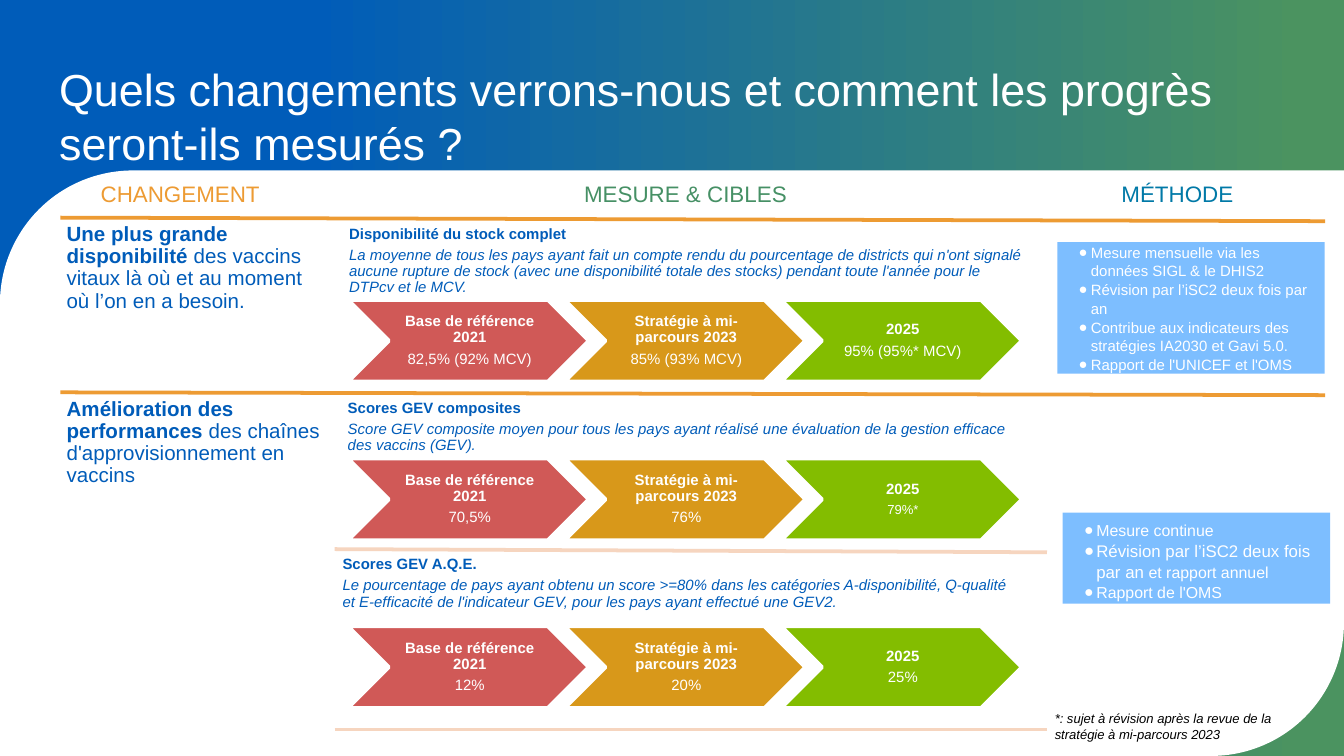
from dataclasses import dataclass
from lxml.etree import SubElement as Sub
from pptx import Presentation
from pptx.dml.color import RGBColor as RGB
from pptx.enum.shapes import MSO_CONNECTOR as Link, MSO_SHAPE as Shape
from pptx.enum.text import MSO_ANCHOR as Anchor, MSO_AUTO_SIZE as Fit, PP_ALIGN as Align
from pptx.oxml.ns import qn
from pptx.util import Pt


@dataclass
class Theme:
    font: str = "Arial"
    blue: str = "005CB9"
    green: str = "4B9360"
    white: str = "FFFFFF"
    black: str = "000000"
    gold: str = "ED9B33"
    peach: str = "F6D5BF"
    leaf: str = "469065"
    teal: str = "0079A7"
    sky: str = "7DBEFF"
    steps: tuple = ("D05957", "D8981A", "83BD00")
    title: float = 24
    head: float = 12
    lead: float = 11
    body: float = 8
    note: float = 7


theme = Theme()


def write(shape, paras, size=theme.body, color=theme.white, pad=(7.2, 7.2, 7.2, 7.2),
          align=Align.LEFT, anchor=Anchor.TOP, line=1, after=0, dots=False):
    frame = shape.text_frame
    frame.word_wrap = True
    frame.auto_size = Fit.NONE
    frame.vertical_anchor = anchor
    (frame.margin_left, frame.margin_top,
     frame.margin_right, frame.margin_bottom) = map(Pt, pad)
    for i, runs in enumerate(paras):
        para = frame.add_paragraph() if i else frame.paragraphs[0]
        if dots:
            props = para._p.get_or_add_pPr()
            props.set("marL", str(Pt(10.8)))
            props.set("indent", str(-Pt(6.5)))
            Sub(Sub(props, qn("a:buClr")), qn("a:srgbClr")).set("val", color)
            Sub(props, qn("a:buChar")).set("char", "●")
        para.alignment = align
        para.line_spacing = line
        para.space_before = Pt(0)
        para.space_after = Pt(after)
        for text, style, *own in runs:
            run = para.add_run()
            run.text = text
            font = run.font
            font.name = theme.font
            font.size = Pt(own[0] if own else size)
            font.bold = style == "b"
            font.italic = style == "i"
            font.color.rgb = RGB.from_string(color)


deck = Presentation()
deck.slide_width, deck.slide_height = Pt(720), Pt(405)
slide = deck.slides.add_slide(deck.slide_layouts[3])
shapes = slide.shapes
title, *lists = slide.placeholders

fill = slide.background.fill
fill.gradient()
fill.gradient_angle = 0
for stop, spot, color in zip(fill.gradient_stops, (0.23, 0.97), (theme.blue, theme.green)):
    stop.position = spot
    stop.color.rgb = RGB.from_string(color)

panel = shapes.add_shape(Shape.ROUND_2_DIAG_RECTANGLE, Pt(0), Pt(91.3), Pt(720), Pt(313.7))
panel.adjustments[0], panel.adjustments[1] = 0.227, 0
panel.shadow.inherit = False
panel.fill.solid()
panel.fill.fore_color.rgb = RGB.from_string(theme.white)
panel.line.fill.background()
title.element.addprevious(panel.element)

title.left, title.top, title.width, title.height = Pt(24.5), Pt(26), Pt(695.5), Pt(45.4)
write(title, [[("Quels changements verrons-nous et comment les progrès seront-ils mesurés ?", "")]],
      size=theme.title)

for left, text, color in [(16.6, "CHANGEMENT", theme.gold),
                          (287.3, "MESURE & CIBLES", theme.leaf),
                          (550.8, "MÉTHODE", theme.teal)]:
    box = shapes.add_textbox(Pt(left), Pt(89.3), Pt(160), Pt(28.8))
    write(box, [[(text, "")]], size=theme.head, color=color, align=Align.CENTER)

for x1, y1, x2, y2, color in [(32.4, 116.6, 709.9, 118.5, theme.gold),
                              (32.4, 210.2, 709.9, 211.7, theme.gold),
                              (179.3, 294.2, 560.9, 295.9, theme.peach),
                              (179.3, 390.8, 560.9, 390.8, theme.peach)]:
    rule = shapes.add_connector(Link.STRAIGHT, Pt(x1), Pt(y1), Pt(x2), Pt(y2))
    rule.line.color.rgb = RGB.from_string(color)
    rule.line.width = Pt(2)
    Sub(rule._element.spPr, qn("a:effectLst"))

for top, width, high, bold, rest in [
    (116.6, 144, 74, "Une plus grande disponibilité ",
     "des vaccins vitaux là où et au moment où l’on en a besoin."),
    (210.2, 142.6, 160, "Amélioration des performances ",
     "des chaînes d'approvisionnement en vaccins"),
]:
    box = shapes.add_textbox(Pt(32.4), Pt(top), Pt(width), Pt(high))
    write(box, [[(bold, "b"), (rest, "")]], size=theme.lead, color=theme.blue,
          pad=(3.3, 3.3, 3.3, 3.3), line=0.9)

names = ("Base de référence 2021", "Stratégie à mi-parcours 2023", "2025")
goals = [
    (184.3, 118.6, 145.4, 160.7, "Disponibilité du stock complet",
     "La moyenne de tous les pays ayant fait un compte rendu du pourcentage de districts "
     "qui n'ont signalé aucune rupture de stock (avec une disponibilité totale des stocks) "
     "pendant toute l'année pour le DTPcv et le MCV.",
     [("82,5% (92% MCV)", ""), ("85% (93% MCV)", ""), ("95% (95%* MCV)", "")]),
    (183.6, 211.7, 74, 245.7, "Scores GEV composites",
     "Score GEV composite moyen pour tous les pays ayant réalisé une évaluation "
     "de la gestion efficace des vaccins (GEV).",
     [("70,5%", ""), ("76%", ""), ("79%*", "", theme.note)]),
    (180.8, 295.6, 74, 335.6, "Scores GEV A.Q.E.",
     "Le pourcentage de pays ayant obtenu un score >=80% dans les catégories "
     "A-disponibilité, Q-qualité et E-efficacité de l'indicateur GEV, "
     "pour les pays ayant effectué une GEV2.",
     [("12%", ""), ("20%", ""), ("25%", "")]),
]
for left, top, high, base, name, text, marks in goals:
    box = shapes.add_textbox(Pt(left), Pt(top), Pt(366.5), Pt(high))
    write(box, [[(name, "b")], [(text, "i")]], color=theme.blue,
          pad=(2.7, 2.7, 2.7, 2.7), line=0.9, after=2.8)
    for i, (label, mark) in enumerate(zip(names, marks)):
        x = 186.5 + 116 * i
        step = shapes.add_shape(Shape.CHEVRON, Pt(x), Pt(base), Pt(128.9), Pt(43.7))
        step.shadow.inherit = False
        step.fill.solid()
        step.fill.fore_color.rgb = RGB.from_string(theme.steps[i])
        step.line.color.rgb = RGB.from_string(theme.white)
        step.line.width = Pt(2)
        box = shapes.add_textbox(Pt(x + 21.7), Pt(base), Pt(85), Pt(43.7))
        write(box, [[(label, "b")], [mark]], pad=(2.7, 0.7, 0.7, 0.7),
              align=Align.CENTER, anchor=Anchor.MIDDLE, line=0.9, after=2.8)

ways = [
    (566.4, 129.7, 70.5, theme.body, Anchor.MIDDLE, [
        [("Mesure mensuelle via les données SIGL & le DHIS2", "")],
        [("Révision par l’iSC2 deux fois par an", "")],
        [("Contribue aux indicateurs des stratégies IA2030 et Gavi 5.0.", "")],
        [("Rapport de l'UNICEF et l'OMS", "")]]),
    (569.3, 274.6, 48.8, 8.5, Anchor.TOP, [
        [("Mesure continue", "")],
        [("Révision par l’iSC2 deux fois par an ", "", 9), ("et rapport annuel", "")],
        [("Rapport de l'OMS", "")]]),
]
for box, (left, top, high, size, anchor, items) in zip(lists, ways):
    box.left, box.top, box.width, box.height = Pt(left), Pt(top), Pt(143.3), Pt(high)
    box.fill.solid()
    box.fill.fore_color.rgb = RGB.from_string(theme.sky)
    write(box, items, size=size, pad=(7.2, 3.6, 7.2, 3.6), anchor=anchor,
          line=1.05, dots=True)

note = shapes.add_textbox(Pt(558), Pt(377.3), Pt(144), Pt(24.5))
write(note, [[("*: sujet à révision après la revue de la stratégie à mi-parcours 2023", "i")]],
      size=theme.note, color=theme.black, pad=(7.2, 3.6, 7.2, 3.6))

deck.save("out.pptx")
